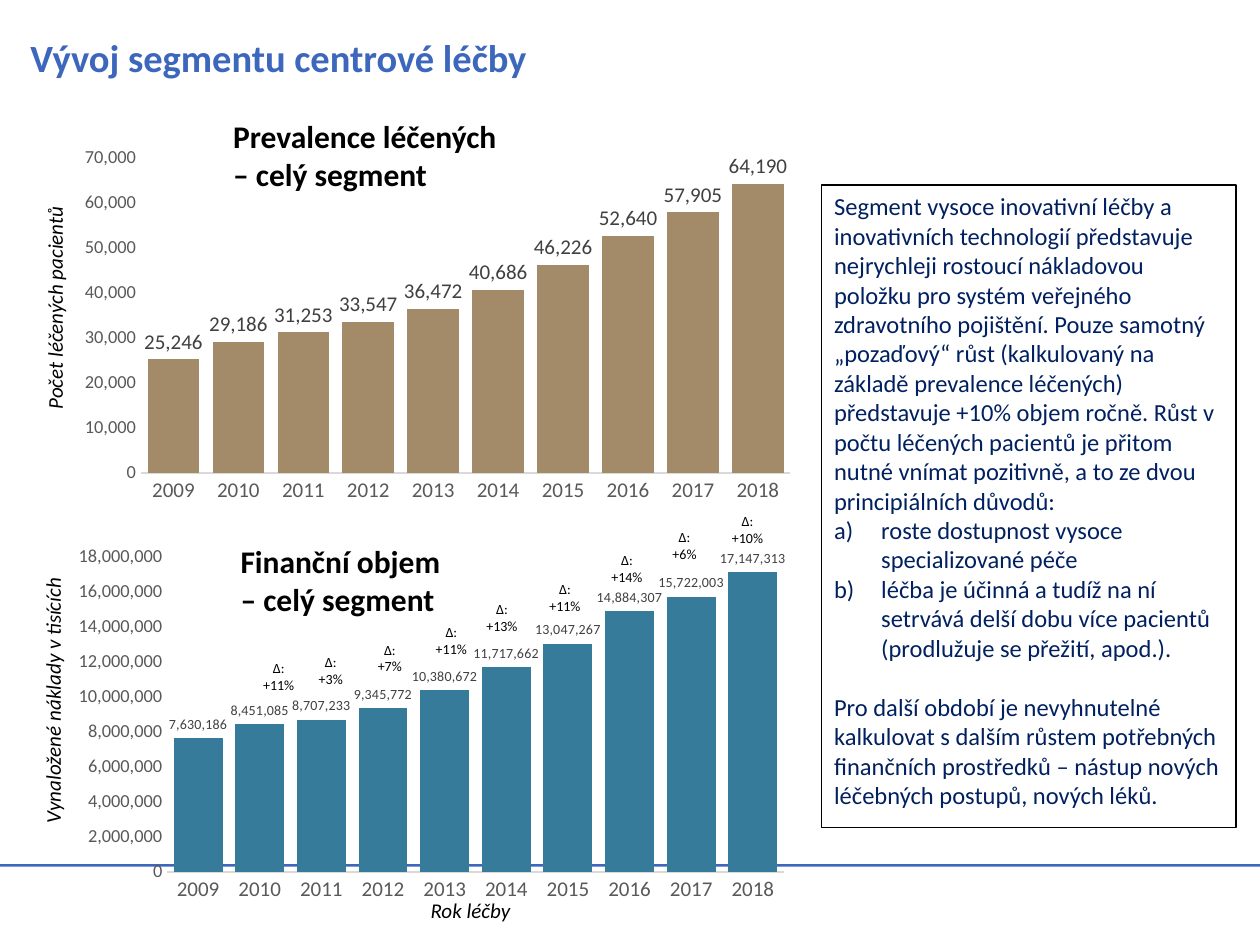
import pptx
import pptx.chart.data
import pptx.dml.color
import pptx.enum.chart
import pptx.enum.shapes
import pptx.enum.text
import pptx.oxml
import pptx.oxml.ns
import pptx.util
from lxml import etree

Cm = pptx.util.Cm
Pt = pptx.util.Pt
ALIGN = pptx.enum.text.PP_ALIGN


def color(value):
    return pptx.dml.color.RGBColor.from_string(value)


class SlideBuilder:
    font_name = "Calibri"
    accent = "3D67BC"
    black = "000000"
    navy = "002060"
    axis_gray = "595959"

    def __init__(self, slide):
        self.slide = slide

    def style(self, font, size, value, bold=False, italic=False):
        font.name = self.font_name
        font.size = Pt(size)
        font.bold = bold
        font.italic = italic
        font.color.rgb = color(value)

    def place(self, shape, box):
        shape.left, shape.top, shape.width, shape.height = [Cm(length) for length in box]

    def title(self, text, box):
        shape = self.slide.shapes.title
        self.place(shape, box)
        frame = shape.text_frame
        frame.text = text
        frame.vertical_anchor = pptx.enum.text.MSO_ANCHOR.MIDDLE
        frame.auto_size = pptx.enum.text.MSO_AUTO_SIZE.NONE
        paragraph = frame.paragraphs[0]
        paragraph.alignment = ALIGN.LEFT
        self.style(paragraph.font, 22, self.accent, bold=True)

    def rule(self, box):
        shape = self.slide.shapes.add_shape(
            pptx.enum.shapes.MSO_SHAPE.RECTANGLE, *[Cm(length) for length in box])
        shape.shadow.inherit = False
        shape.fill.solid()
        shape.fill.fore_color.rgb = color(self.accent)
        shape.line.fill.background()

    def text(self, lines, box, size, bold=False, italic=False,
             alignment=ALIGN.LEFT, rotation=0):
        shape = self.slide.shapes.add_textbox(*[Cm(length) for length in box])
        shape.rotation = rotation
        frame = shape.text_frame
        frame.word_wrap = True
        frame.text = "\n".join(lines)
        for paragraph in frame.paragraphs:
            paragraph.alignment = alignment
            self.style(paragraph.font, size, self.black, bold, italic)

    def panel(self, entries, box):
        shape = self.slide.placeholders[1]
        self.place(shape, box)
        shape.line.color.rgb = color(self.black)
        shape.line.width = Pt(0.75)
        frame = shape.text_frame
        frame.auto_size = pptx.enum.text.MSO_AUTO_SIZE.NONE
        frame.vertical_anchor = pptx.enum.text.MSO_ANCHOR.TOP
        frame.text = "\n".join(text for text, lettered, space in entries)
        for paragraph, (text, lettered, space) in zip(frame.paragraphs, entries):
            properties = paragraph._p.get_or_add_pPr()
            indent = Cm(0.95) if lettered else 0
            properties.set("marL", str(indent))
            properties.set("indent", str(-indent))
            bullet = "a:buAutoNum" if lettered else "a:buNone"
            element = etree.SubElement(properties, pptx.oxml.ns.qn(bullet))
            if lettered:
                element.set("type", "alphaLcParenR")
            paragraph.space_before = Pt(space)
            self.style(paragraph.font, 14, self.navy)

    def chart(self, years, values, box, fill, label_size, maximum, step, plot):
        data = pptx.chart.data.CategoryChartData(number_format="#,##0")
        data.categories = years
        data.add_series("Series 1", values)
        chart = self.slide.shapes.add_chart(
            pptx.enum.chart.XL_CHART_TYPE.COLUMN_CLUSTERED,
            *[Cm(length) for length in box], data).chart
        chart.has_legend = False
        chart.has_title = False
        self.style(chart.font, 10, self.black)

        bars = chart.plots[0]
        bars.gap_width = 26
        bars.overlap = 23
        bars.vary_by_categories = False
        series_fill = bars.series[0].format.fill
        series_fill.solid()
        series_fill.fore_color.rgb = color(fill)
        bars.has_data_labels = True
        labels = bars.data_labels
        labels.show_value = True
        labels.number_format = "#,##0"
        labels.number_format_is_linked = False
        labels.position = pptx.enum.chart.XL_LABEL_POSITION.OUTSIDE_END
        self.style(labels.font, label_size, "404040")

        for axis, size in ((chart.category_axis, 12), (chart.value_axis, 10.5)):
            axis.has_major_gridlines = False
            axis.major_tick_mark = pptx.enum.chart.XL_TICK_MARK.NONE
            axis.minor_tick_mark = pptx.enum.chart.XL_TICK_MARK.NONE
            self.style(axis.tick_labels.font, size, self.axis_gray)
        chart.category_axis.format.line.color.rgb = color("D9D9D9")
        chart.category_axis.format.line.width = Pt(0.75)
        value_axis = chart.value_axis
        value_axis.format.line.fill.background()
        value_axis.minimum_scale = 0
        value_axis.maximum_scale = maximum
        value_axis.major_unit = step
        value_axis.tick_labels.number_format = "#,##0"
        value_axis.tick_labels.number_format_is_linked = False
        self.plot_layout(chart, plot)

    def plot_layout(self, chart, plot):
        qn = pptx.oxml.ns.qn
        area = chart._chartSpace.find(".//" + qn("c:plotArea"))
        for old_layout in area.findall(qn("c:layout")):
            area.remove(old_layout)
        layout = etree.Element(qn("c:layout"))
        manual = etree.SubElement(layout, qn("c:manualLayout"))
        settings = [("layoutTarget", "inner"), ("xMode", "edge"), ("yMode", "edge")]
        for name, value in settings + list(zip("xywh", plot)):
            etree.SubElement(manual, qn("c:" + name)).set("val", str(value))
        area.insert(0, layout)


def main():
    presentation = pptx.Presentation()
    presentation.slide_width = Cm(25.4)
    presentation.slide_height = Cm(19.05)
    slide = presentation.slides.add_slide(presentation.slide_layouts[1])
    builder = SlideBuilder(slide)
    years = [str(year) for year in range(2009, 2019)]
    patients = [25246, 29186, 31253, 33547, 36472, 40686, 46226, 52640, 57905, 64190]
    costs = [7630186, 8451085, 8707233, 9345772, 10380672,
             11717662, 13047267, 14884307, 15722003, 17147313]
    growth = [(5.02, 13.18, 11), (6.07, 13.06, 3), (7.26, 12.8, 7),
              (8.5, 12.45, 11), (9.52, 11.99, 13), (10.79, 11.58, 11),
              (12.04, 11, 14), (13.2, 10.54, 6), (14.47, 10.21, 10)]

    builder.rule((0, 17.42, 25.4, 0.05))
    builder.title("Vývoj segmentu centrové léčby", (0.36, 0.23, 24.61, 1.83))

    builder.text(["Prevalence léčených", "– celý segment"],
                 (4.45, 2.24, 6.91, 1.8), 18, bold=True)
    builder.chart(years, patients, (1.42, 2.82, 14.81, 7.47), "A38B69", 12,
                  70000, 10000, (0.096, 0.049, 0.884, 0.85))
    builder.text(["Počet léčených pacientů"], (-1.5, 5.59, 5.13, 0.69), 12,
                 italic=True, rotation=270)

    builder.text(["Finanční objem", "– celý segment"],
                 (4.6, 10.8, 6.91, 1.8), 18, bold=True)
    builder.chart(years, costs, (1.27, 10.87, 14.81, 7.47), "367B9A", 8,
                  18000000, 2000000, (0.142, 0.048, 0.839, 0.85))
    for left, top, percent in growth:
        builder.text(["∆:", f"+{percent}%"], (left, top, 1.2, 0.94), 8,
                     alignment=ALIGN.CENTER)
    builder.text(["Vynaložené náklady v tisících"], (-1.75, 13.67, 5.6, 0.74), 12,
                 italic=True, rotation=270)
    builder.text(["Rok léčby"], (8.43, 17.96, 7.47, 0.79), 12, italic=True)

    builder.panel([
        ("Segment vysoce inovativní léčby a inovativních technologií představuje "
         "nejrychleji rostoucí nákladovou položku pro systém veřejného zdravotního "
         "pojištění. Pouze samotný „pozaďový“ růst (kalkulovaný na základě prevalence "
         "léčených) představuje +10% objem ročně. Růst v počtu léčených pacientů je "
         "přitom nutné vnímat pozitivně, a to ze dvou principiálních důvodů:", False, 0),
        ("roste dostupnost vysoce specializované péče", True, 0),
        ("léčba je účinná a tudíž na ní setrvává delší dobu více pacientů "
         "(prodlužuje se přežití, apod.).", True, 0),
        ("Pro další období je nevyhnutelné kalkulovat s dalším růstem potřebných "
         "finančních prostředků – nástup nových léčebných postupů, nových léků.", False, 17),
    ], (16.56, 3.73, 8.36, 12.95))

    presentation.save("out.pptx")


if __name__ == "__main__":
    main()
